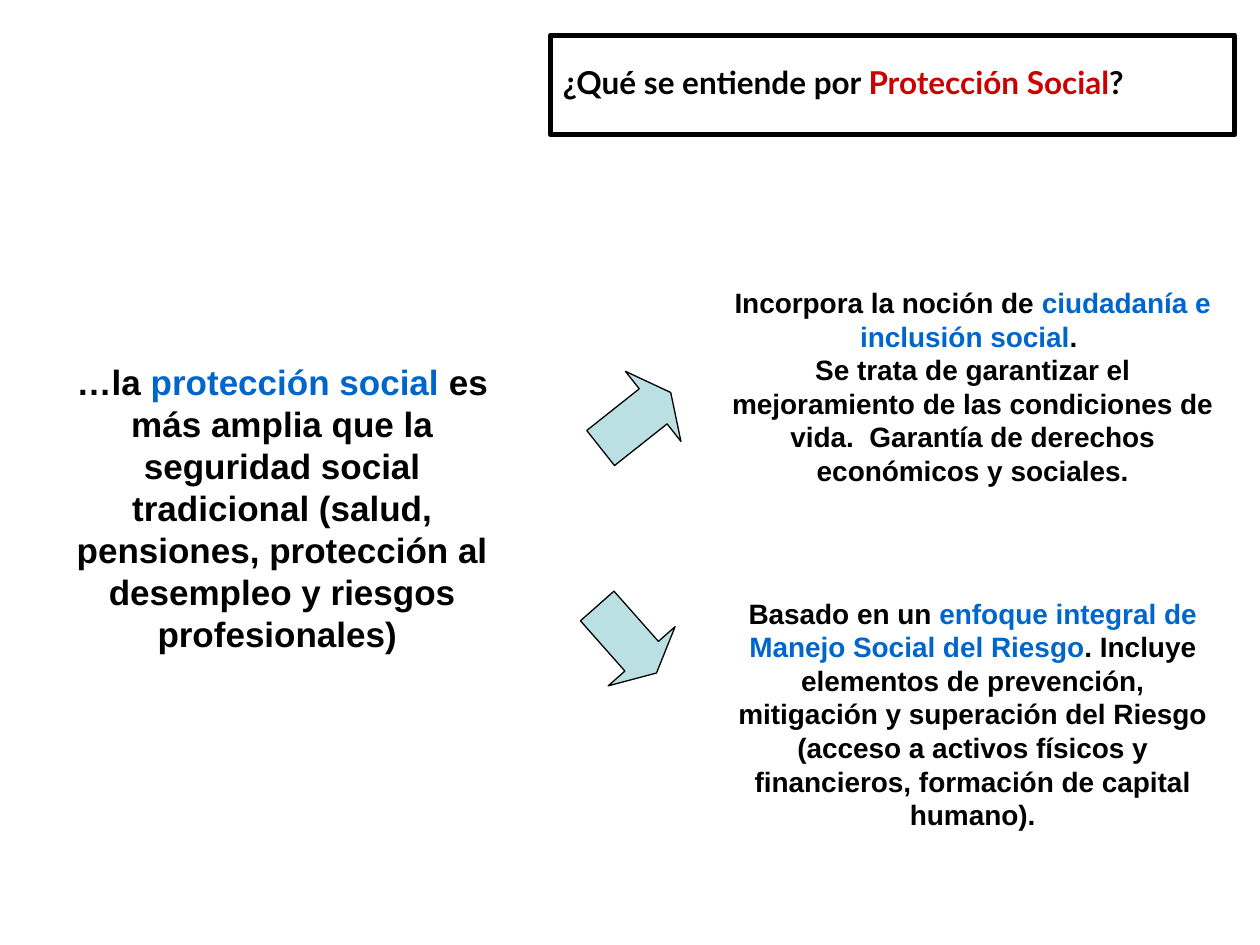
from pptx import Presentation
from pptx.dml.color import RGBColor
from pptx.enum.shapes import MSO_SHAPE
from pptx.enum.text import MSO_ANCHOR, PP_ALIGN
from pptx.util import Inches, Pt

BLACK, BLUE, RED = "000000", "0066CC", "CC0000"
WHITE, PALE_TEAL = "FFFFFF", "BBE0E3"


def color(hex_code):
    return RGBColor.from_string(hex_code)


def inches(box):
    return [Inches(length) for length in box]


def write(shape, pieces, size, font="Arial", align=PP_ALIGN.CENTER):
    """Fill a shape with one bold paragraph of (text, colour) pieces."""
    frame = shape.text_frame
    frame.word_wrap = True
    frame.vertical_anchor = MSO_ANCHOR.MIDDLE
    paragraph = frame.paragraphs[0]
    paragraph.alignment = align
    for text, hex_code in pieces:
        for index, line in enumerate(text.split("\n")):
            if index:
                paragraph.add_line_break()
            run = paragraph.add_run()
            run.text = line
            run.font.name = font
            run.font.size = Pt(size)
            run.font.bold = True
            run.font.color.rgb = color(hex_code)
    return paragraph


def outlined_shape(slide, kind, box, fill, line_width):
    shape = slide.shapes.add_shape(kind, *inches(box))
    shape.shadow.inherit = False
    shape.fill.solid()
    shape.fill.fore_color.rgb = color(fill)
    shape.line.color.rgb = color(BLACK)
    shape.line.width = Pt(line_width)
    return shape


def add_title(slide, box, pieces):
    frame = outlined_shape(slide, MSO_SHAPE.RECTANGLE, box, WHITE, 3)
    title = write(frame, pieces, 18, "Lato", PP_ALIGN.LEFT)
    title.line_spacing = 0.8


def add_statement(slide, box, pieces, size):
    write(slide.shapes.add_textbox(*inches(box)), pieces, size)


def add_arrow(slide, box, rotation):
    arrow = outlined_shape(slide, MSO_SHAPE.DOWN_ARROW, box, PALE_TEAL, 0.75)
    arrow.adjustments[0] = 0.5
    arrow.adjustments[1] = 0.25
    arrow.rotation = rotation


def main():
    prs = Presentation()
    prs.slide_width, prs.slide_height = Inches(10), Inches(7.5)
    slide = prs.slides.add_slide(prs.slide_layouts[6])

    # Title
    add_title(slide, (4.37, 0.28, 5.43, 0.79), [
        ("¿Qué se entiende por ", BLACK),
        ("Protección Social", RED),
        ("?", BLACK),
    ])

    # Main idea
    add_statement(slide, (0.43, 2.81, 3.62, 2.44), [
        ("…la ", BLACK),
        ("protección social", BLUE),
        (" es más amplia que la seguridad social tradicional (salud, "
         "pensiones, protección al desempleo y riesgos profesionales) ", BLACK),
    ], 20)

    # Arrows towards the two consequences
    add_arrow(slide, (4.69, 2.98, 0.71, 0.71), 231.6)
    add_arrow(slide, (4.62, 4.72, 0.71, 0.71), 318.5)

    # Consequences
    citizenship = [
        ("Incorpora la noción de ", BLACK),
        ("ciudadanía e inclusión social", BLUE),
        (". \nSe trata de garantizar el mejoramiento de las condiciones de "
         "vida.  Garantía de derechos económicos y sociales.", BLACK),
    ]
    risk_management = [
        ("Basado en un ", BLACK),
        ("enfoque integral de Manejo Social del Riesgo", BLUE),
        (". Incluye elementos de prevención, mitigación y superación del "
         "Riesgo (acceso a activos físicos y financieros, formación de "
         "capital humano).", BLACK),
    ]
    for top, pieces in ((2.12, citizenship), (4.72, risk_management)):
        add_statement(slide, (5.71, top, 4.02, 1.89), pieces, 16)

    prs.save("out.pptx")


if __name__ == "__main__":
    main()
